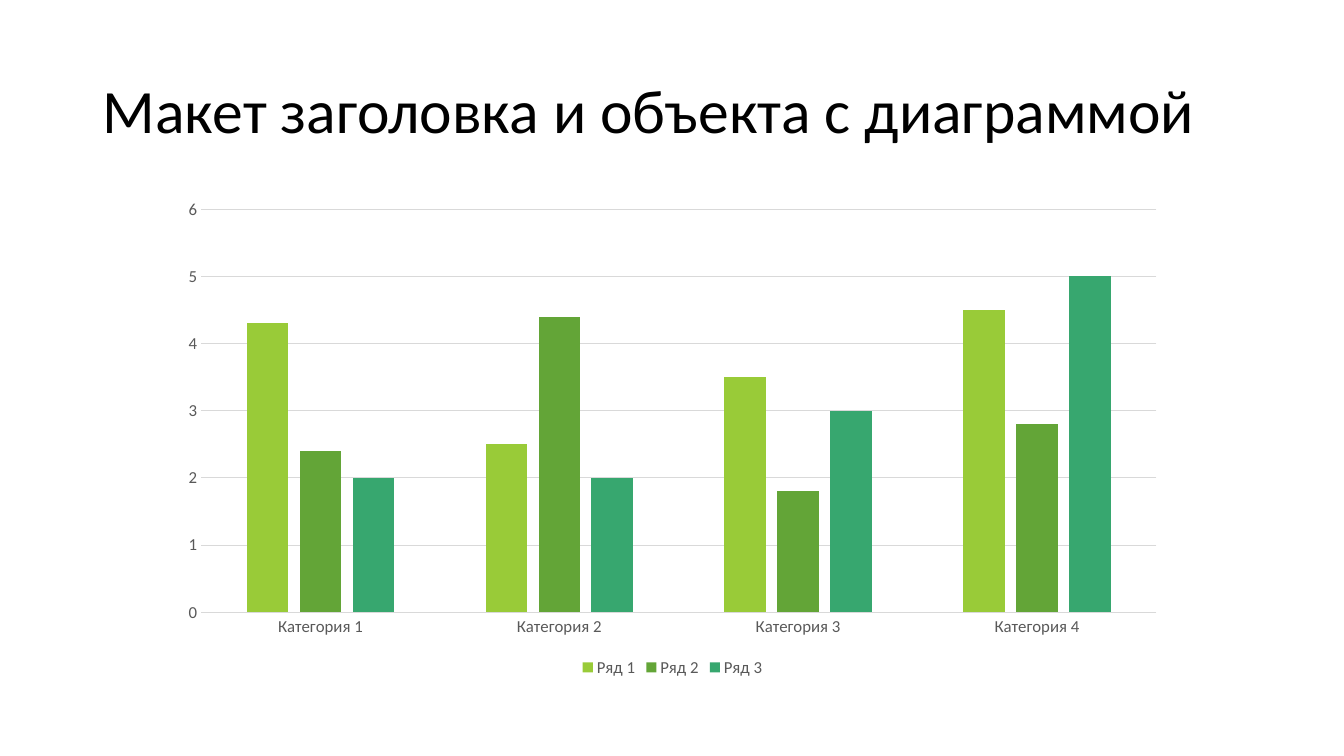
"""Build a slide with a title and a clustered column chart."""
from pptx import Presentation
from pptx.chart.data import CategoryChartData
from pptx.dml.color import RGBColor as RGB
from pptx.enum.chart import XL_CHART_TYPE as CT, XL_LEGEND_POSITION as LP, XL_TICK_MARK as TM
from pptx.enum.text import MSO_ANCHOR
from pptx.util import Inches, Pt

TITLE = "Макет заголовка и объекта с диаграммой"
TITLE_BOX = (0.92, 0.4, 11.5, 1.45)
CHART_BOX = (1.67, 1.88, 10, 4.88)
CATEGORIES = [f"Категория {n}" for n in range(1, 5)]
SERIES = [
    ("Ряд 1", (4.3, 2.5, 3.5, 4.5)),
    ("Ряд 2", (2.4, 4.4, 1.8, 2.8)),
    ("Ряд 3", (2, 2, 3, 5)),
]
THEME = {
    "font": "Calibri",
    "title": "000000",
    "label": "595959",
    "rule": "D9D9D9",
    "series": ("99CB38", "63A537", "37A76F"),
    "title_size": 44,
    "label_size": 12,
    "rule_width": 0.75,
}


def set_font(font, size, color):
    font.name = THEME["font"]
    font.size = Pt(size)
    font.color.rgb = RGB.from_string(color)


def set_rule(line):
    line.color.rgb = RGB.from_string(THEME["rule"])
    line.width = Pt(THEME["rule_width"])


def add_title(s):
    tf = s.shapes.add_textbox(*map(Inches, TITLE_BOX)).text_frame
    tf.word_wrap = True
    tf.vertical_anchor = MSO_ANCHOR.MIDDLE
    p = tf.paragraphs[0]
    p.text = TITLE
    p.line_spacing = 0.9
    set_font(p.font, THEME["title_size"], THEME["title"])


def add_columns(s):
    data = CategoryChartData()
    data.categories = CATEGORIES
    for name, values in SERIES:
        data.add_series(name, values)
    chart = s.shapes.add_chart(CT.COLUMN_CLUSTERED, *map(Inches, CHART_BOX), data).chart
    set_font(chart.font, THEME["label_size"], THEME["label"])
    chart.has_title = False
    chart.has_legend = True
    chart.legend.position = LP.BOTTOM
    chart.legend.include_in_layout = False

    plot = chart.plots[0]
    plot.gap_width, plot.overlap = 219, -27
    plot.vary_by_categories = False
    for series, color in zip(plot.series, THEME["series"]):
        series.format.fill.solid()
        series.format.fill.fore_color.rgb = RGB.from_string(color)

    cat_axis, val_axis = chart.category_axis, chart.value_axis
    for axis in (cat_axis, val_axis):
        axis.major_tick_mark = axis.minor_tick_mark = TM.NONE
    set_rule(cat_axis.format.line)
    val_axis.format.line.fill.background()
    val_axis.minimum_scale, val_axis.maximum_scale, val_axis.major_unit = 0, 6, 1
    set_rule(val_axis.major_gridlines.format.line)


def main():
    prs = Presentation()
    prs.slide_width, prs.slide_height = Inches(13.33), Inches(7.5)
    s = prs.slides.add_slide(prs.slide_layouts[6])
    add_title(s)
    add_columns(s)
    prs.save("out.pptx")


if __name__ == "__main__":
    main()
